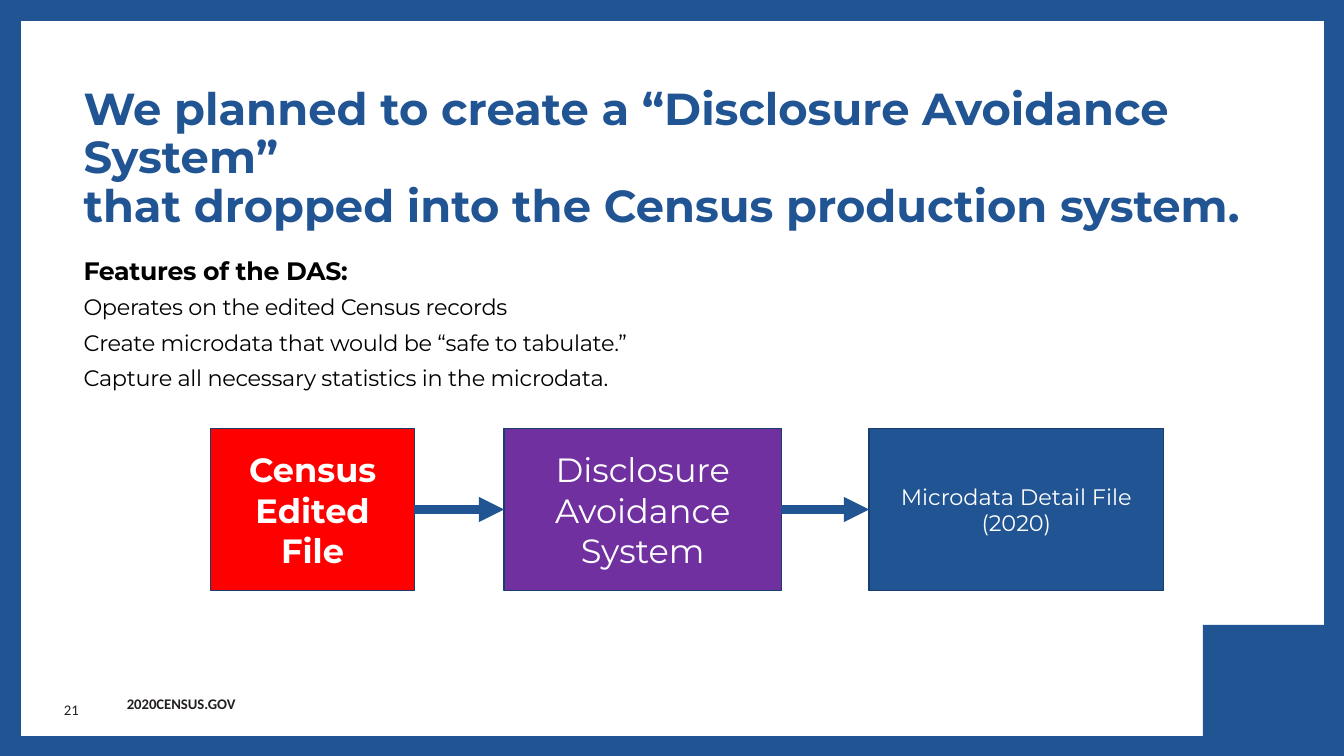
from lxml import etree
from pptx import Presentation
from pptx.dml.color import RGBColor
from pptx.enum.shapes import MSO_CONNECTOR, MSO_SHAPE
from pptx.enum.text import MSO_ANCHOR, PP_ALIGN
from pptx.oxml.ns import qn
from pptx.util import Inches, Pt

RECTANGLE = MSO_SHAPE.RECTANGLE
STRAIGHT = MSO_CONNECTOR.STRAIGHT
TOP, MIDDLE = MSO_ANCHOR.TOP, MSO_ANCHOR.MIDDLE
LEFT, CENTER, RIGHT = PP_ALIGN.LEFT, PP_ALIGN.CENTER, PP_ALIGN.RIGHT
LEFT_SIDE, RIGHT_SIDE = 1, 3

COLORS = {
    "blue": "205493", "title": "215493", "outline": "183E6D", "red": "FF0000",
    "purple": "7030A0", "white": "FFFFFF", "black": "000000", "footer": "231F20",
}


class SlideBuilder:
    heading_font = "Montserrat"
    footer_font = "Calibri"

    def __init__(self, presentation):
        self.slide = presentation.slides.add_slide(presentation.slide_layouts[6])

    def color(self, name):
        return RGBColor.from_string(COLORS[name])

    def background(self, color):
        fill = self.slide.background.fill
        fill.solid()
        fill.fore_color.rgb = self.color(color)

    def fill_text(self, frame, lines, color, font, align=LEFT, anchor=TOP, wrap=True,
                  line_spacing=None, space_before=0, tracking=None):
        """Fill a text frame; lines holds (text, size, bold) tuples."""
        frame.word_wrap = wrap
        frame.vertical_anchor = anchor
        for index, (text, size, bold) in enumerate(lines):
            paragraph = frame.add_paragraph() if index else frame.paragraphs[0]
            paragraph.text = text
            layout = {"alignment": align, "line_spacing": line_spacing,
                      "space_before": Pt(space_before if index else 0)}
            for name, value in layout.items():
                setattr(paragraph, name, value)
            for run in paragraph.runs:
                style = {"name": font, "size": Pt(size), "bold": bold}
                for name, value in style.items():
                    setattr(run.font, name, value)
                run.font.color.rgb = self.color(color)
                if tracking is not None:
                    run.font._element.set("spc", str(tracking))

    def text(self, box, lines, color, font, **options):
        shape = self.slide.shapes.add_textbox(*map(Inches, box))
        self.fill_text(shape.text_frame, lines, color, font, **options)

    def rectangle(self, box, fill, outline=None):
        shape = self.slide.shapes.add_shape(RECTANGLE, *map(Inches, box))
        shape.shadow.inherit = False
        shape.fill.solid()
        shape.fill.fore_color.rgb = self.color(fill)
        if outline:
            shape.line.color.rgb = self.color(outline)
            shape.line.width = Pt(1)
        else:
            shape.line.fill.background()
        return shape

    def step(self, box, fill, line):
        shape = self.rectangle(box, fill, "outline")
        self.fill_text(shape.text_frame, [line], "white", self.heading_font,
                       align=CENTER, anchor=MIDDLE)
        return shape

    def arrow(self, source, target):
        connector = self.slide.shapes.add_connector(STRAIGHT, 0, 0, 0, 0)
        connector.begin_connect(source, RIGHT_SIDE)
        connector.end_connect(target, LEFT_SIDE)
        connector.line.color.rgb = self.color("blue")
        connector.line.width = Pt(6)
        line = connector.line._get_or_add_ln()
        etree.SubElement(line, qn("a:tailEnd"), type="triangle")
        etree.SubElement(connector._element.spPr, qn("a:effectLst"))


def main():
    presentation = Presentation()
    presentation.slide_width = Inches(13.33)
    presentation.slide_height = Inches(7.5)
    builder = SlideBuilder(presentation)

    # Frame and corner block
    builder.background("blue")
    builder.rectangle((0.21, 0.21, 12.92, 7.09), "white")
    builder.text((1.16, 6.84, 1.31, 0.28), [("2020CENSUS.GOV", 10.5, True)],
                 "footer", builder.footer_font, wrap=False)
    builder.rectangle((11.93, 6.2, 1.4, 1.3), "blue")

    # Title and features
    title = ("We planned to create a “Disclosure Avoidance System”\v"
             "that dropped into the Census production system.")
    builder.text((0.73, 0.81, 12.08, 1.45), [(title, 32, True)], "title",
                 builder.heading_font, line_spacing=0.9)
    features = [
        ("Features of the DAS:", 18, True),
        ("Operates on the edited Census records", 16, False),
        ("Create microdata that would be “safe to tabulate.”", 16, False),
        ("Capture all necessary statistics in the microdata.", 16, False),
    ]
    builder.text((0.73, 2.48, 11.71, 1.6), features, "black",
                 builder.heading_font, space_before=6, tracking=-20)

    # Processing flow
    step_top, step_height = 4.25, 1.61
    flow = [
        (2.09, 2.02, "red", ("Census Edited File", 24, True)),
        (5, 2.75, "purple", ("Disclosure Avoidance System", 24, False)),
        (8.62, 2.92, "blue", ("Microdata Detail File (2020)", 16, False)),
    ]
    steps = [builder.step((left, step_top, width, step_height), fill, line)
             for left, width, fill, line in flow]
    for source, target in zip(steps, steps[1:]):
        builder.arrow(source, target)

    # Page number
    builder.text((0.21, 6.84, 0.67, 0.4), [("21", 10.5, False)], "footer",
                 builder.footer_font, align=RIGHT, anchor=MIDDLE)

    presentation.save("out.pptx")


if __name__ == "__main__":
    main()
